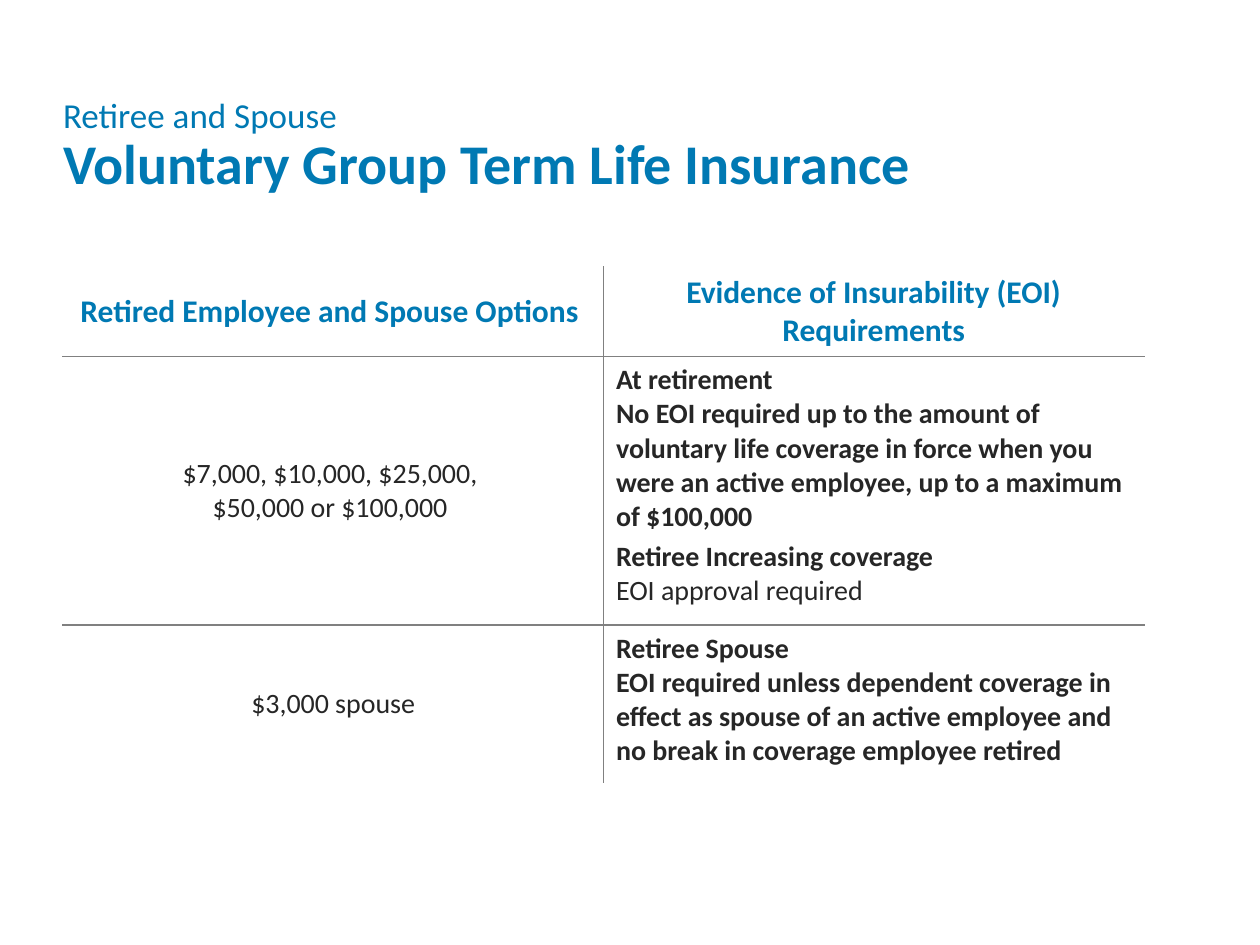
from dataclasses import dataclass

from lxml import etree
from pptx import Presentation
from pptx import util as u
from pptx.dml.color import RGBColor
from pptx.enum import text
from pptx.oxml.ns import qn

COLORS = {"blue": "0079B3", "ink": "262626", "rule": "808080"}
FONT = "Calibri"
ROW_HEIGHTS = (0.7, 2.13, 1.26)
COL_WIDTH = 4.29


@dataclass
class Style:
    size: float
    color: str
    bold: bool


@dataclass
class CellSpec:
    paragraphs: list[str]
    styles: list[Style]  # one style per line of a paragraph
    centered: bool = True


HEADER = [Style(18, "blue", True)]
BODY = [Style(16, "ink", False)] * 2
DETAIL = [Style(16, "ink", True), Style(16, "ink", False)]
TITLE = [Style(20, "blue", False), Style(32, "blue", True)]

ROWS = [
    [CellSpec(["Retired Employee and Spouse Options "], HEADER),
     CellSpec(["Evidence of Insurability (EOI) Requirements"], HEADER)],
    [CellSpec(["$7,000, $10,000, $25,000, \n$50,000 or $100,000 "], BODY),
     CellSpec(["At retirement \nNo EOI required up to the amount of voluntary life "
               "coverage in force when you were an active employee, up to a "
               "maximum of $100,000",
               "Retiree Increasing coverage \nEOI approval required"],
              DETAIL, centered=False)],
    [CellSpec(["$3,000 spouse"], BODY),
     CellSpec(["Retiree Spouse \nEOI required unless dependent coverage in effect as "
               "spouse of an active employee and no break in coverage employee "
               "retired"], DETAIL, centered=False)],
]


def format_runs(p, styles: list[Style]) -> None:
    for r, style in zip(p.runs, styles):
        r.font.name = FONT
        r.font.size = u.Pt(style.size)
        r.font.bold = style.bold
        r.font.color.rgb = RGBColor.from_string(COLORS[style.color])


def add_border(cell, side: str) -> None:
    ln = etree.SubElement(cell._tc.get_or_add_tcPr(), qn(f"a:ln{side}"), w=str(u.Pt(1)))
    fill = etree.SubElement(ln, qn("a:solidFill"))
    etree.SubElement(fill, qn("a:srgbClr"), val=COLORS["rule"])


def fill_cell(cell, spec: CellSpec) -> None:
    tf = cell.text_frame
    tf.text = spec.paragraphs[0]
    for line in spec.paragraphs[1:]:
        p = tf.add_paragraph()
        p.text = line
        p.space_before = u.Pt(3.2)
    for p in tf.paragraphs:
        p.alignment = text.PP_ALIGN.CENTER if spec.centered else text.PP_ALIGN.LEFT
        format_runs(p, spec.styles)
    cell.vertical_anchor = text.MSO_ANCHOR.MIDDLE if spec.centered else text.MSO_ANCHOR.TOP


def add_title(s) -> None:
    sp = s.shapes.add_textbox(u.Inches(0.5), u.Inches(0.78), u.Inches(8.88), u.Inches(0.96))
    tf = sp.text_frame
    tf.word_wrap = True
    tf.margin_left = tf.margin_top = tf.margin_right = tf.margin_bottom = 0
    p = tf.paragraphs[0]
    p.text = "Retiree and Spouse\nVoluntary Group Term Life Insurance"
    p.line_spacing = 0.9
    format_runs(p, TITLE)


def add_options_table(s) -> None:
    n_rows, n_cols = len(ROWS), len(ROWS[0])
    table = s.shapes.add_table(
        n_rows, n_cols, u.Inches(0.5), u.Inches(2.12),
        u.Inches(COL_WIDTH * n_cols), u.Inches(sum(ROW_HEIGHTS))).table
    table.first_row = table.horz_banding = False
    for column in table.columns:
        column.width = u.Inches(COL_WIDTH)
    for row, height in zip(table.rows, ROW_HEIGHTS):
        row.height = u.Inches(height)

    for i, specs in enumerate(ROWS):
        for j, spec in enumerate(specs):
            cell = table.cell(i, j)
            fill_cell(cell, spec)
            # Rules run only between cells, never around the table
            inner = {"L": j > 0, "R": j < n_cols - 1, "T": i > 0, "B": i < n_rows - 1}
            for side, shown in inner.items():
                if shown:
                    add_border(cell, side)
            cell.fill.background()


def main() -> None:
    prs = Presentation()
    prs.slide_width, prs.slide_height = u.Inches(10), u.Inches(7.5)
    s = prs.slides.add_slide(prs.slide_layouts[6])
    add_options_table(s)
    add_title(s)
    prs.save("out.pptx")


if __name__ == "__main__":
    main()
